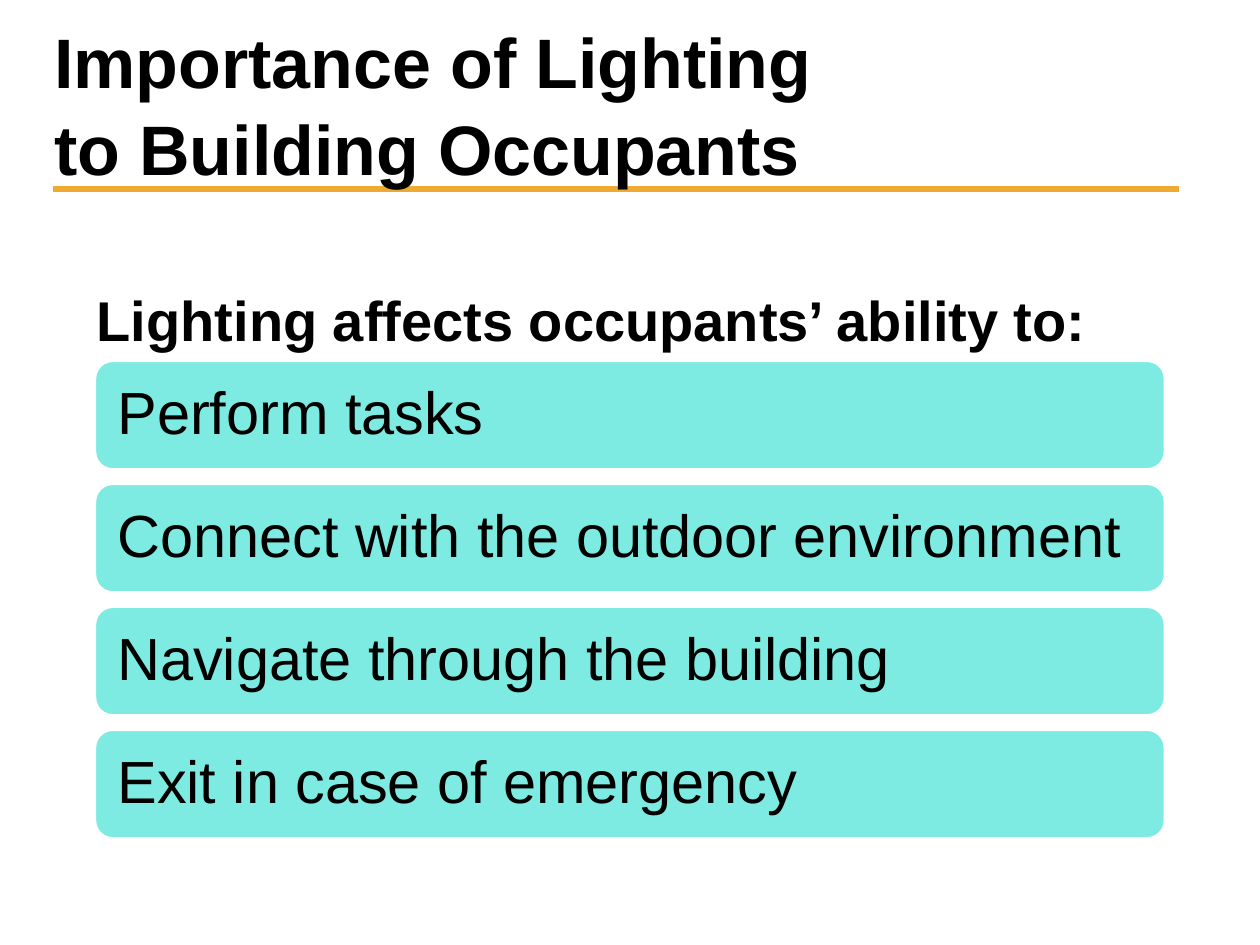
from dataclasses import dataclass

import pptx
import pptx.dml.color
import pptx.enum.shapes
import pptx.enum.text
import pptx.oxml
import pptx.oxml.ns
import pptx.util

Inches = pptx.util.Inches
Pt = pptx.util.Pt

ABILITIES = [
    "Perform tasks",
    "Connect with the outdoor environment",
    "Navigate through the building",
    "Exit in case of emergency",
]
BAR_TOP = 2.86
BAR_PITCH = 0.976


@dataclass
class Bar:
    text: str
    top: float
    left: float = 0.75
    width: float = 8.5
    height: float = 0.87


def color(value: str) -> pptx.dml.color.RGBColor:
    return pptx.dml.color.RGBColor.from_string(value)


def format_text(text_frame, size: int, bold: bool) -> None:
    for paragraph in text_frame.paragraphs:
        paragraph.alignment = pptx.enum.text.PP_ALIGN.LEFT
        for run in paragraph.runs:
            run.font.name = "Arial"
            run.font.size = Pt(size)
            run.font.bold = bold
            run.font.color.rgb = color("000000")


def draw_title(slide, text: str) -> None:
    title = slide.shapes.title
    title.left, title.top = Inches(0.33), Inches(0.27)
    title.width, title.height = Inches(7.25), Inches(1.08)
    text_frame = title.text_frame
    text_frame.text = text
    text_frame.auto_size = pptx.enum.text.MSO_AUTO_SIZE.NONE
    text_frame.vertical_anchor = pptx.enum.text.MSO_ANCHOR.MIDDLE
    text_frame.paragraphs[0].line_spacing = 1.04
    format_text(text_frame, 40, True)


def draw_rule(slide) -> None:
    rule = slide.shapes.add_connector(
        pptx.enum.shapes.MSO_CONNECTOR.STRAIGHT,
        Inches(0.42), Inches(1.5), Inches(9.36), Inches(1.5),
    )
    rule.line.color.rgb = color("EFAB31")
    rule.line.width = Pt(4)
    properties = rule._element.spPr
    properties.append(pptx.oxml.parse_xml(
        f"<a:effectLst {pptx.oxml.ns.nsdecls('a')}/>"
    ))
    slide.shapes._spTree.insert(2, rule._element)


def draw_heading(slide, text: str) -> None:
    heading = slide.shapes.add_textbox(
        Inches(0.67), Inches(2.22), Inches(8.11), Inches(0.64)
    )
    heading.text_frame.text = text
    heading.text_frame.word_wrap = False
    format_text(heading.text_frame, 32, True)


def draw_bar(slide, bar: Bar) -> None:
    shape = slide.shapes.add_shape(
        pptx.enum.shapes.MSO_SHAPE.ROUNDED_RECTANGLE,
        Inches(bar.left), Inches(bar.top), Inches(bar.width), Inches(bar.height),
    )
    shape.shadow.inherit = False
    shape.fill.solid()
    shape.fill.fore_color.rgb = color("7DEBE1")
    shape.line.color.rgb = color("FFFFFF")
    shape.line.width = Pt(2)
    text_frame = shape.text_frame
    text_frame.text = bar.text
    text_frame.word_wrap = True
    text_frame.vertical_anchor = pptx.enum.text.MSO_ANCHOR.MIDDLE
    text_frame.margin_left = text_frame.margin_right = Inches(0.14)
    text_frame.margin_top = text_frame.margin_bottom = Inches(0.14)
    text_frame.paragraphs[0].line_spacing = 0.9
    format_text(text_frame, 34, False)


def main() -> None:
    presentation = pptx.Presentation()
    presentation.slide_width = Inches(10)
    presentation.slide_height = Inches(7.5)
    slide = presentation.slides.add_slide(presentation.slide_layouts[5])
    draw_rule(slide)
    for index, ability in enumerate(ABILITIES):
        draw_bar(slide, Bar(ability, BAR_TOP + index * BAR_PITCH))
    draw_title(slide, "Importance of Lighting\vto Building Occupants")
    draw_heading(slide, "Lighting affects occupants’ ability to:")
    presentation.save("out.pptx")


if __name__ == "__main__":
    main()
